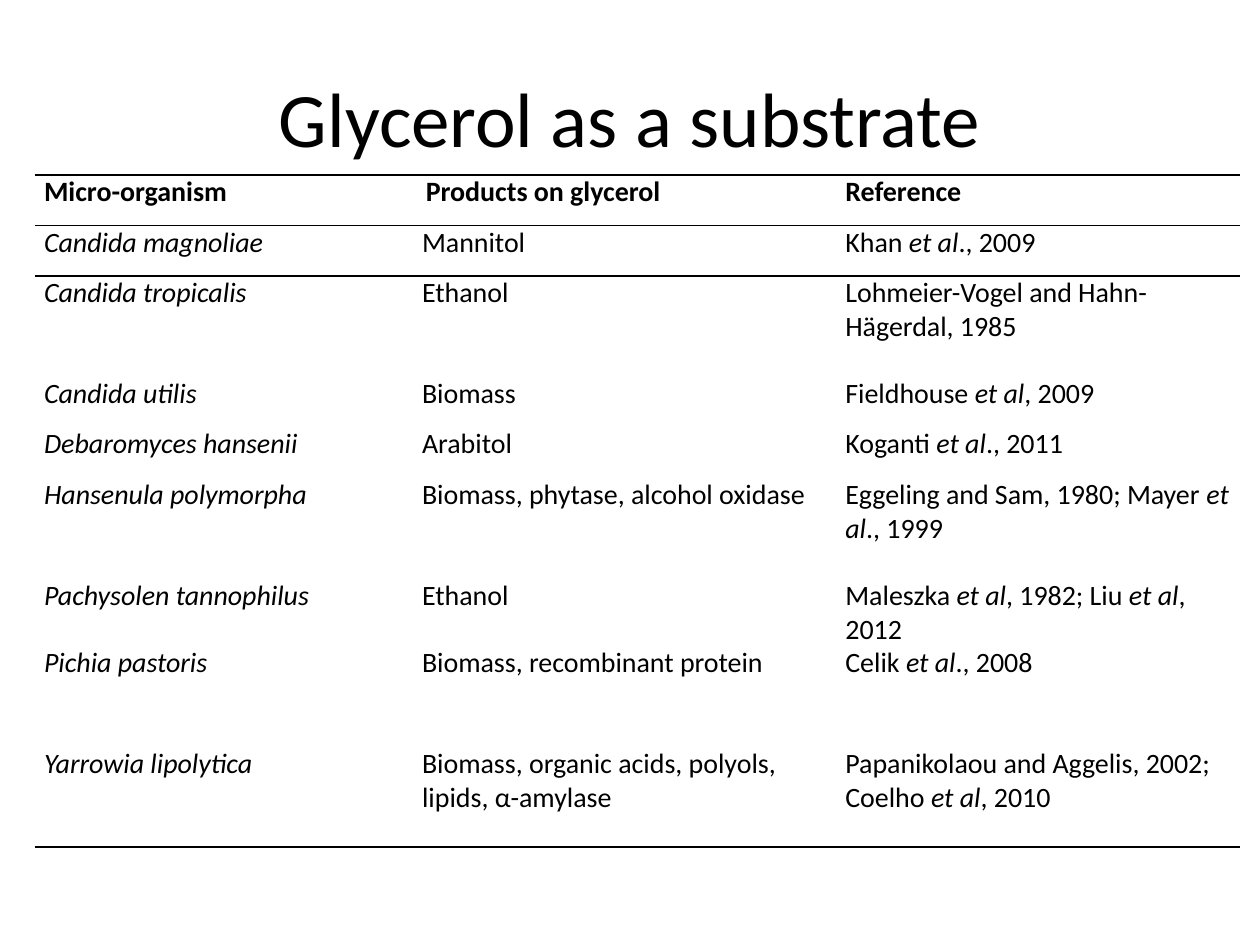
from lxml import etree
from pptx import Presentation
from pptx.dml.color import RGBColor
from pptx.enum import text
from pptx.oxml.ns import qn
from pptx.util import Inches, Pt

BLACK = RGBColor(0x00, 0x00, 0x00)
FONT = "Calibri"
NO_STYLE_NO_GRID = "{2D5ABB26-0587-4C30-8999-92F81FD0307C}"

COL_WIDTHS = [3, 3.36, 3.2]
ROW_HEIGHTS = [0.4, 0.4, 0.8, 0.4, 0.4, 0.8, 0.4, 0.8, 0.8]
ROWS = [
    ("Micro-organism", "Products on glycerol", "Reference"),
    ("Candida magnoliae", "Mannitol", "Khan et al., 2009"),
    ("Candida tropicalis", "Ethanol", "Lohmeier-Vogel and Hahn-Hägerdal, 1985"),
    ("Candida utilis", "Biomass", "Fieldhouse et al, 2009"),
    ("Debaromyces hansenii", "Arabitol", "Koganti et al., 2011"),
    ("Hansenula polymorpha", "Biomass, phytase, alcohol oxidase",
     "Eggeling and Sam, 1980; Mayer et al., 1999"),
    ("Pachysolen tannophilus", "Ethanol", "Maleszka et al, 1982; Liu et al, 2012"),
    ("Pichia pastoris", "Biomass, recombinant protein", "Celik et al., 2008"),
    ("Yarrowia lipolytica", "Biomass, organic acids, polyols, lipids, α-amylase",
     "Papanikolaou and Aggelis, 2002; Coelho et al, 2010"),
]


def add_run(p, words, size, bold=False, italic=False):
    r = p.add_run()
    r.text = words
    r.font.name = FONT
    r.font.size = Pt(size)
    r.font.bold = bold
    r.font.italic = italic
    r.font.color.rgb = BLACK


def add_border(cell, side):
    """Draw a 1 pt black line on a cell side: "T" (top) or "B" (bottom)."""
    ln = etree.SubElement(cell._tc.get_or_add_tcPr(), qn(f"a:ln{side}"), w=str(Pt(1)))
    fill = etree.SubElement(ln, qn("a:solidFill"))
    etree.SubElement(fill, qn("a:srgbClr"), val=str(BLACK))


prs = Presentation()
prs.slide_width, prs.slide_height = Inches(10), Inches(7.5)
s = prs.slides.add_slide(prs.slide_layouts[6])

# Title
title = s.shapes.add_textbox(Inches(0.5), Inches(0.3), Inches(9), Inches(1.25))
tf = title.text_frame
tf.word_wrap = True
tf.vertical_anchor = text.MSO_ANCHOR.MIDDLE
p = tf.paragraphs[0]
p.alignment = text.PP_ALIGN.CENTER
add_run(p, "Glycerol as a substrate", 44)

# Table
table = s.shapes.add_table(len(ROWS), len(COL_WIDTHS), Inches(0.28), Inches(1.39),
                           Inches(sum(COL_WIDTHS)), Inches(sum(ROW_HEIGHTS))).table
table.first_row = True
table.horz_banding = False
table._tbl.tblPr.find(qn("a:tableStyleId")).text = NO_STYLE_NO_GRID
for column, width in zip(table.columns, COL_WIDTHS):
    column.width = Inches(width)
for row, height in zip(table.rows, ROW_HEIGHTS):
    row.height = Inches(height)

last = len(ROWS) - 1
for i, row in enumerate(ROWS):
    for j, words in enumerate(row):
        cell = table.cell(i, j)
        cell.margin_left = cell.margin_right = Inches(0.07)
        cell.margin_top = cell.margin_bottom = 0
        if i in (0, 1):
            add_border(cell, "T")
        if i in (0, last):
            add_border(cell, "B")
        cell.fill.background()
        p = cell.text_frame.paragraphs[0]
        if (i, j) == (0, 1):
            pPr = p._p.get_or_add_pPr()
            pPr.set("marL", str(Inches(0.3)))
            pPr.set("indent", str(Inches(-0.27)))
        # Species names and every "et al" are italic
        for k, part in enumerate(words.split("et al")):
            if k:
                add_run(p, "et al", 16, italic=True)
            add_run(p, part, 16, bold=i == 0, italic=i > 0 and j == 0)

prs.save("out.pptx")
